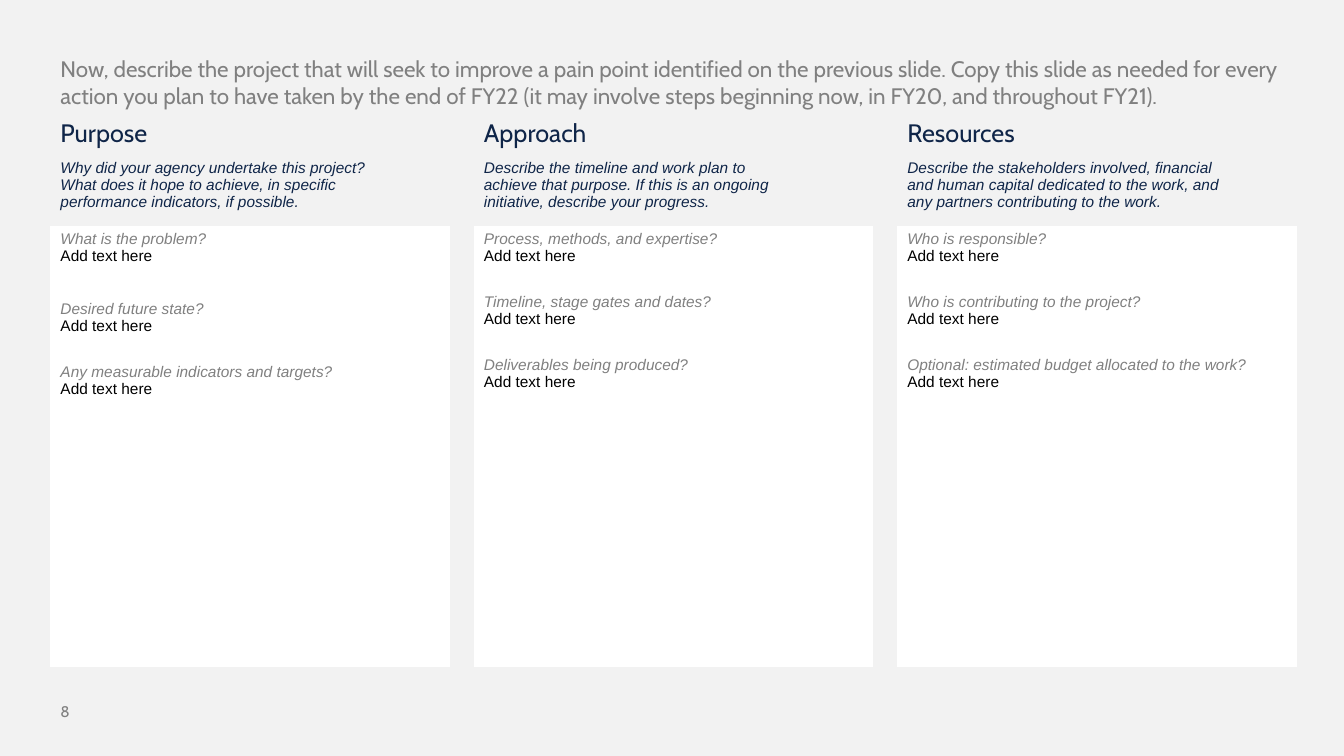
from pptx import Presentation
from pptx.dml.color import RGBColor
from pptx.enum.text import MSO_ANCHOR, PP_ALIGN
from pptx.util import Inches, Pt

TOP, LEFT = MSO_ANCHOR.TOP, PP_ALIGN.LEFT
NAVY, GRAY, BLACK, WHITE, PALE = "0F2548", "808080", "000000", "FFFFFF", "F2F2F2"
NO_STYLE_NO_GRID = "{2D5ABB26-0587-4C30-8999-92F81FD0307C}"

TITLE = ("Now, describe the project that will seek to improve a pain point identified on the "
         "previous slide. Copy this slide as needed for every action you plan to have taken by "
         "the end of FY22 (it may involve steps beginning now, in FY20, and throughout FY21).")
PAGE = "8"
ANSWER = "Add text here"
# heading, guidance, [(question, space before in points)]
SECTIONS = [
    ("Purpose",
     "Why did your agency undertake this project? What does it hope to achieve, in specific "
     "performance indicators, if possible.",
     [("What is the problem?", 0), ("Desired future state?", 25),
      ("Any measurable indicators and targets?", 20.5)]),
    ("Approach",
     "Describe the timeline and work plan to achieve that purpose. If this is an ongoing "
     "initiative, describe your progress.",
     [("Process, methods, and expertise?", 0), ("Timeline, stage gates and dates?", 20.5),
      ("Deliverables being produced?", 20.5)]),
    ("Resources",
     "Describe the stakeholders involved, financial and human capital dedicated to the work, "
     "and any partners contributing to the work.",
     [("Who is responsible?", 0), ("Who is contributing to the project?", 20.5),
      ("Optional: estimated budget allocated to the work?", 20.5)]),
]
MARGIN, TABLE_TOP = 0.5, 1.12
COLUMN, GAP = 3.96, 0.24
ROWS = [0.41, 0.71, 1.46, 1.46, 1.46]


def rgb(color):
    return RGBColor.from_string(color)


def write(p, text, size, color, font="Arial", italic=False, before=0):
    p.text = text
    p.alignment = LEFT
    p.space_before = Pt(before)
    f = p.runs[0].font
    f.size, f.name, f.bold, f.italic = Pt(size), font, False, italic
    f.color.rgb = rgb(color)


def place(shape, x, y, w, h):
    shape.left, shape.top, shape.width, shape.height = map(Inches, (x, y, w, h))
    shape.text_frame.word_wrap = True
    shape.text_frame.vertical_anchor = TOP


def fill_section(table, col, heading, guidance, questions):
    write(table.cell(0, col).text_frame.paragraphs[0], heading, 18, NAVY, "Cabin")

    intro = table.cell(1, col)
    intro.margin_right = Inches(0.7)
    write(intro.text_frame.paragraphs[0], guidance, 11, NAVY, italic=True)

    body = table.cell(2, col)
    body.merge(table.cell(len(ROWS) - 1, col))
    body.fill.solid()
    body.fill.fore_color.rgb = rgb(WHITE)
    tf = body.text_frame
    for i, (question, before) in enumerate(questions):
        p = tf.add_paragraph() if i else tf.paragraphs[0]
        write(p, question, 11, GRAY, italic=True, before=before)
        write(tf.add_paragraph(), ANSWER, 11, BLACK)


def main():
    prs = Presentation()
    prs.slide_width, prs.slide_height = Inches(13.33), Inches(7.5)
    s = prs.slides.add_slide(prs.slide_layouts[5])
    s.background.fill.solid()
    s.background.fill.fore_color.rgb = rgb(PALE)

    title = s.shapes.title
    place(title, MARGIN, 0.5, 12.33, 0.64)
    write(title.text_frame.paragraphs[0], TITLE, 16, GRAY, "Cabin")

    widths = [COLUMN, GAP, COLUMN, GAP, COLUMN]
    frame = s.shapes.add_table(len(ROWS), len(widths), Inches(MARGIN), Inches(TABLE_TOP),
                               Inches(sum(widths)), Inches(sum(ROWS)))
    table = frame.table
    table.first_row = table.horz_banding = False
    table._tbl.tblPr[0].text = NO_STYLE_NO_GRID
    for column, width in zip(table.columns, widths):
        column.width = Inches(width)
    for row, height in zip(table.rows, ROWS):
        row.height = Inches(height)
    for cell in table.iter_cells():
        cell.fill.background()
    for i, section in enumerate(SECTIONS):
        fill_section(table, 2 * i, *section)

    number = s.shapes.add_textbox(0, 0, 0, 0)
    place(number, MARGIN, 6.92, 0.83, 0.4)
    write(number.text_frame.paragraphs[0], PAGE, 11, GRAY, "Cabin")

    prs.save("out.pptx")


if __name__ == "__main__":
    main()
